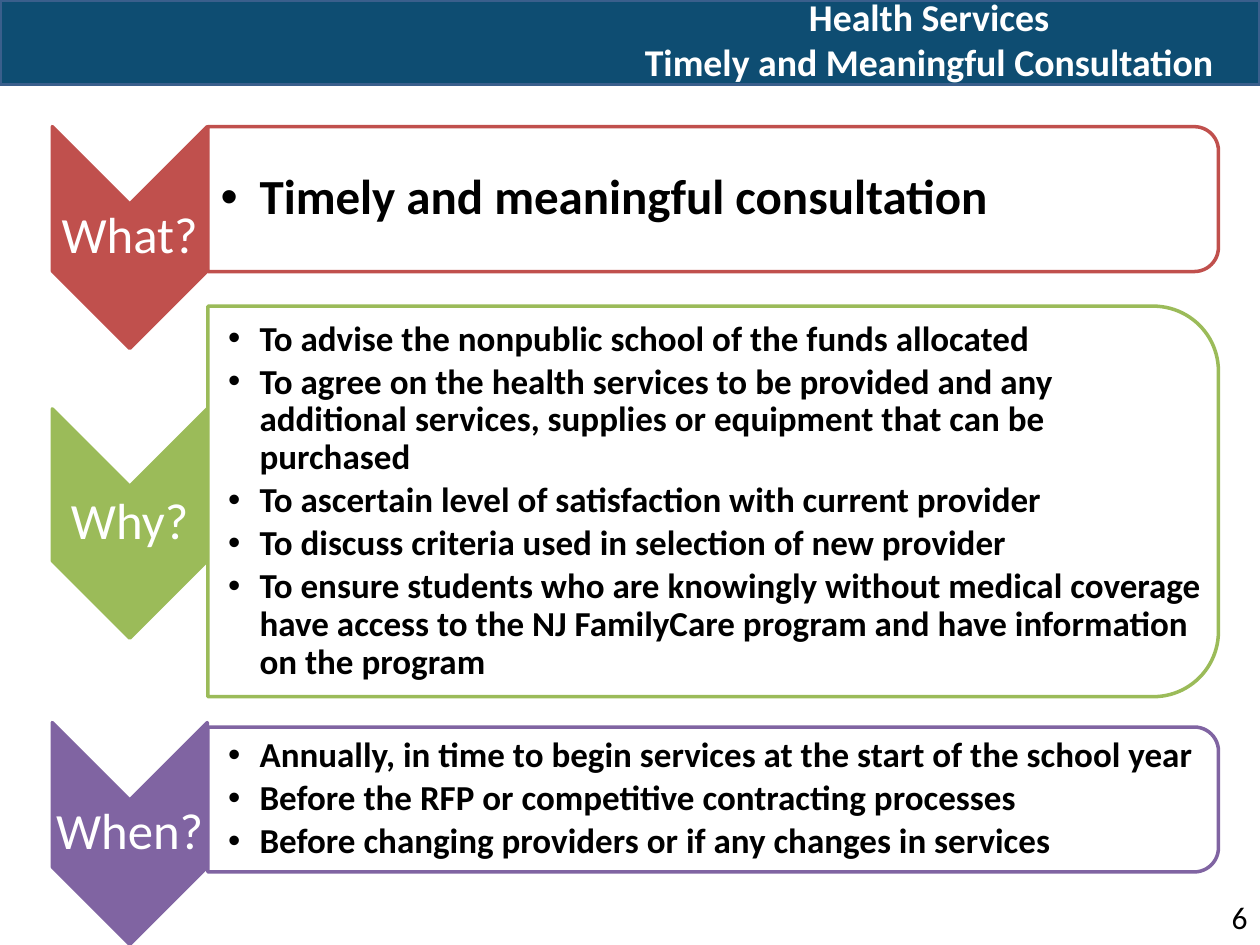
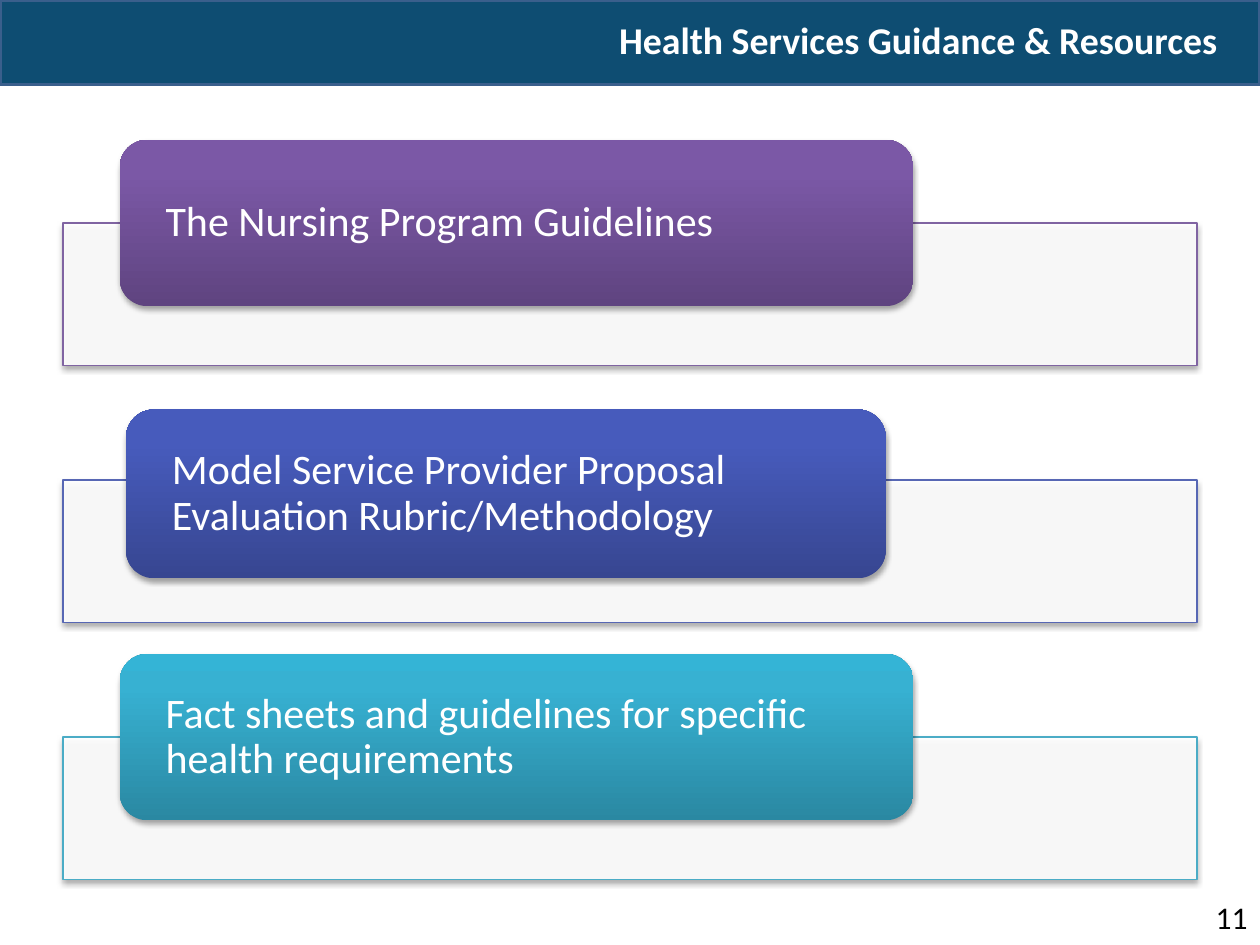
from copy import deepcopy
from dataclasses import dataclass
from lxml.etree import SubElement
from pptx import Presentation
from pptx.dml.color import RGBColor
from pptx.enum.shapes import MSO_SHAPE
from pptx.enum.text import MSO_ANCHOR, MSO_AUTO_SIZE, PP_ALIGN
from pptx.oxml.ns import qn
from pptx.util import Inches, Pt

COLS, ROWS = 100, 75


@dataclass(frozen=True)
class Theme:
    font: str = "Calibri"
    navy: str = "0E4D72"
    edge: str = "3A5F8C"
    white: str = "FFFFFF"
    black: str = "000000"
    red: str = "C0504D"
    green: str = "9BBB59"
    plum: str = "8064A2"
    blue: str = "5767B4"
    teal: str = "4BACC6"
    plums: tuple = ("5F4480", "7B58A6", "7C57A8")
    blues: tuple = ("374691", "475BBC", "455ABF")
    teals: tuple = ("2A88A2", "37B1D2", "34B4D6")
    title: float = 21.6
    tag: float = 29
    lead: float = 28
    item: float = 20
    card: float = 24
    page: float = 18


class Deck:
    def __init__(self, theme):
        self.theme = theme
        self.show = Presentation()
        self.show.slide_width = Inches(10)
        self.show.slide_height = Inches(7.5)
        self.slide = None

    def box(self, left, top, wide, high):
        """Turn columns and rows into slide lengths."""
        col = self.show.slide_width / COLS
        row = self.show.slide_height / ROWS
        return [int(n) for n in (left * col, top * row, wide * col, high * row)]

    def start(self, layout, title, left, page):
        """Open a slide with its band, page number and title."""
        look = self.theme
        self.slide = self.show.slides.add_slide(self.show.slide_layouts[layout])
        self.shape(MSO_SHAPE.RECTANGLE, (0, 0, COLS, 6.7), look.navy, look.edge, 2)
        self.text((93.3, 70.8, 6.7, 4), page, look.page, look.black, PP_ALIGN.RIGHT)
        head = self.slide.shapes.title
        self.place(head, (left, 0, COLS - left, 6.2))
        self.fill(head, [title], look.title, look.white, PP_ALIGN.CENTER, bold=True)

    def place(self, holder, box):
        """Move a placeholder and bring it to the front."""
        holder.left, holder.top, holder.width, holder.height = self.box(*box)
        holder.element.getparent().append(holder.element)

    def shape(self, kind, box, fill=None, line=None, width=1, clear=None, turn=False):
        """Draw a preset shape; a turned one fills its box after a quarter turn."""
        left, top, wide, high = box
        if turn:
            left, top = left + (wide - high) / 2, top + (high - wide) / 2
            wide, high = high, wide
        item = self.slide.shapes.add_shape(kind, *self.box(left, top, wide, high))
        item.rotation = 90 if turn else 0
        item.shadow.inherit = False
        if fill:
            item.fill.solid()
            item.fill.fore_color.rgb = RGBColor.from_string(fill)
        if clear:
            tint = item.element.spPr.find(qn("a:solidFill"))[0]
            SubElement(tint, qn("a:alpha"), val=str(clear * 1000))
        if line:
            item.line.color.rgb = RGBColor.from_string(line)
            item.line.width = Pt(width)
        else:
            item.line.fill.background()
        return item

    def shade(self, item):
        """Cast a soft shadow straight down."""
        glow = item.element.spPr.find(qn("a:effectLst"))
        cast = SubElement(glow, qn("a:outerShdw"), blurRad=str(Pt(3.1)),
                          dist=str(Pt(1.8)), dir="5400000", rotWithShape="0")
        tint = SubElement(cast, qn("a:srgbClr"), val=self.theme.black)
        SubElement(tint, qn("a:alpha"), val="35000")

    def blend(self, item, tones):
        """Fill from the bottom up with three tones."""
        item.fill.gradient()
        stops = item.element.spPr.find(qn("a:gradFill")).find(qn("a:gsLst"))
        stops.append(deepcopy(stops[0]))
        for stop, tone, spot in zip(item.fill.gradient_stops, tones, (0, 0.8, 1)):
            stop.color.rgb = RGBColor.from_string(tone)
            stop.position = spot

    def fill(self, item, lines, size, color, align=PP_ALIGN.LEFT, bold=False,
             pad=(0.1, 0.1), gap=0, pitch=1, hang=None):
        """Set text; pad is in inches, gap a share of the size, hang a bullet indent."""
        frame = item.text_frame
        frame.auto_size = MSO_AUTO_SIZE.NONE
        frame.word_wrap = True
        frame.vertical_anchor = MSO_ANCHOR.MIDDLE
        frame.margin_left, frame.margin_right = Inches(pad[0]), Inches(pad[1])
        frame.margin_top = frame.margin_bottom = Inches(0.01)
        frame.text = "\n".join(lines)
        for para in frame.paragraphs:
            para.alignment = align
            para.line_spacing = pitch
            para.space_before, para.space_after = Pt(0), Pt(size * gap)
            if hang:
                props = para._p.get_or_add_pPr()
                props.set("marL", str(Inches(hang)))
                props.set("indent", str(-Inches(hang)))
                SubElement(props, qn("a:buFont"), typeface="Arial")
                SubElement(props, qn("a:buChar"), char="•")
            font = para.font
            font.name, font.size, font.bold = self.theme.font, Pt(size), bold
            font.color.rgb = RGBColor.from_string(color)

    def text(self, box, words, size, color, align, **more):
        item = self.slide.shapes.add_textbox(*self.box(*box))
        self.fill(item, [words], size, color, align, **more)

    def step(self, spot, tag, color, arrow, panel, lines, size, pad, hang):
        """Chevron with its question, and the framed list beside it."""
        look = self.theme
        top, high = arrow
        mark = (4.15, top, 12.3, high)
        self.shape(MSO_SHAPE.CHEVRON, mark, color, color, 2, turn=True)
        self.text(mark, tag, look.tag, look.white, PP_ALIGN.CENTER,
                  pad=(0.02, 0.02), pitch=0.9)
        top, high = panel
        self.shape(MSO_SHAPE.ROUND_2_SAME_RECTANGLE, (16.5, top, 80.2, high),
                   look.white, color, 2, clear=90, turn=True)
        body = self.slide.placeholders[spot]
        self.place(body, (16.5, top, 79, high))
        self.fill(body, lines, size, look.black, bold=True, pad=(pad, 0.01),
                  gap=0.15, pitch=0.9, hang=hang)

    def card(self, top, words, line, tones, box):
        """Pale bar with a glossy card over it."""
        look = self.theme
        bar = self.shape(MSO_SHAPE.RECTANGLE, (5, top, 90, 11.3), look.white, line,
                         0.75, clear=90)
        self.shade(bar)
        item = self.shape(MSO_SHAPE.ROUNDED_RECTANGLE, box)
        self.blend(item, tones)
        self.shade(item)
        self.fill(item, [words], look.card, look.white, pad=(0.3, 0.3), pitch=0.9)

    def prune(self):
        """Drop placeholders left empty."""
        for item in list(self.slide.placeholders):
            if not item.text_frame.text:
                item.element.getparent().remove(item.element)


def main():
    look = Theme()
    deck = Deck(look)

    # Consultation: what, why and when
    deck.start(4, "Health Services\vTimely and Meaningful Consultation", 47.5, "6")
    steps = [
        ("What?", look.red, (10.05, 17.6), (10.05, 11.5),
         ["Timely and meaningful consultation"], look.lead, 0.1, 0.31),
        ("Why?", look.green, (32.45, 18.2), (24.3, 31),
         ["To advise the nonpublic school of the funds allocated",
          "To agree on the health services to be provided and any additional "
          "services, supplies or equipment that can be purchased",
          "To ascertain level of satisfaction with current provider",
          "To discuss criteria used in selection of new provider",
          "To ensure students who are knowingly without medical coverage have "
          "access to the NJ FamilyCare program and have information on the program"],
         look.item, 0.16, 0.25),
        ("When?", look.plum, (57.35, 17.6), (57.7, 11.5),
         ["Annually, in time to begin services at the start of the school year",
          "Before the RFP or competitive contracting processes",
          "Before changing providers or if any changes in services"],
         look.item, 0.16, 0.25),
    ]
    for spot, step in enumerate(steps, 1):
        deck.step(spot, *step)
    deck.prune()

    # Guidance and resources
    deck.start(5, "Health Services Guidance & Resources", 45.8, "11")
    cards = [
        ("The Nursing Program Guidelines", look.plum, look.plums,
         (9.5, 11.1, 63, 13.2)),
        ("Model Service Provider Proposal Evaluation Rubric/Methodology",
         look.blue, look.blues, (10, 32.5, 60.3, 13.4)),
        ("Fact sheets and guidelines for specific health requirements",
         look.teal, look.teals, (9.5, 51.9, 63, 13.2)),
    ]
    for rank, card in enumerate(cards):
        deck.card(17.7 + 20.4 * rank, *card)

    deck.show.save("out.pptx")


if __name__ == "__main__":
    main()
